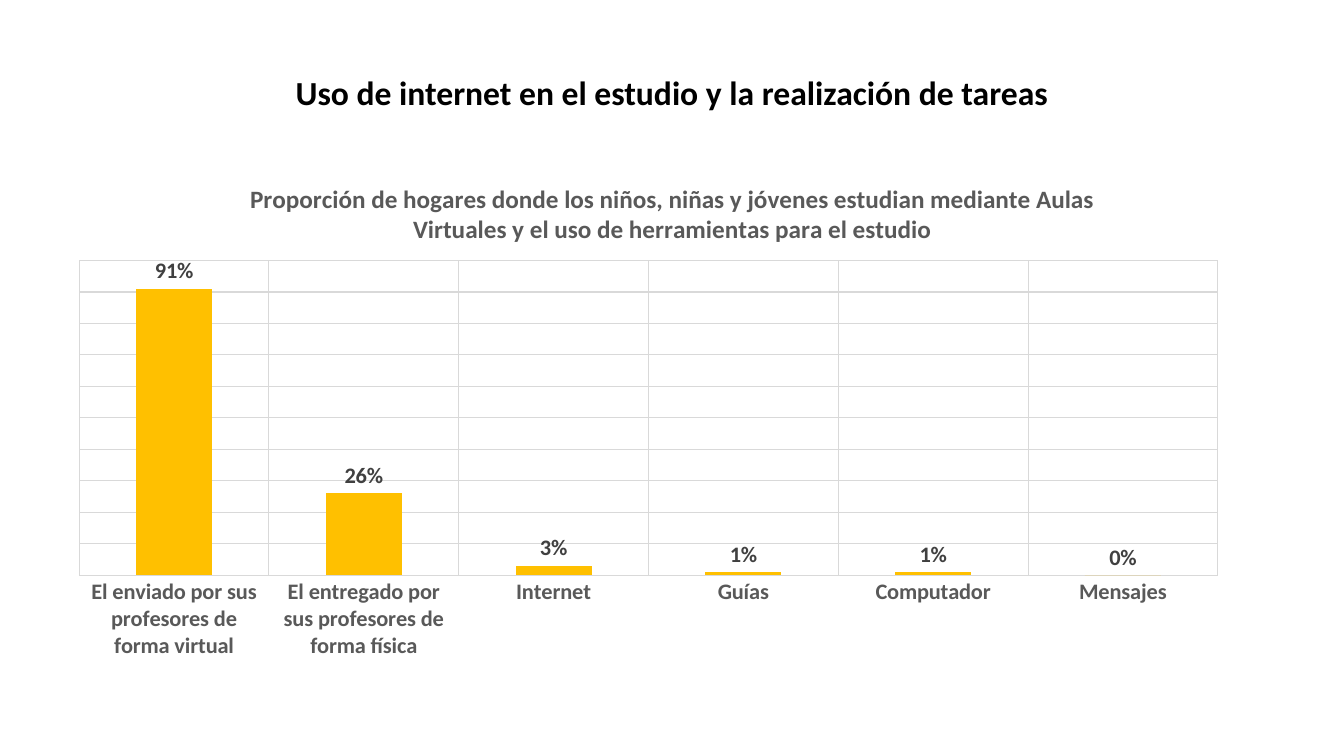
from dataclasses import dataclass

import lxml.etree
import pptx
import pptx.chart.data
import pptx.dml.color
import pptx.enum.chart
import pptx.enum.text
import pptx.oxml.ns
import pptx.util
from pptx.util import Inches


@dataclass(frozen=True)
class Theme:
    """Colours, font and type sizes of the slide."""
    font: str = "Calibri"
    heading: str = "000000"
    caption: str = "595959"
    value: str = "404040"
    bar: str = "FFC000"
    grid: str = "D9D9D9"
    heading_size: int = 24
    caption_size: int = 18
    label_size: int = 16
    base_size: int = 10


THEME = Theme()
HEADING = "Uso de internet en el estudio y la realización de tareas"
QUESTION = ("Proporción de hogares donde los niños, niñas y jóvenes estudian mediante "
            "Aulas Virtuales y el uso de herramientas para el estudio")
TOOLS = {
    "El enviado por sus profesores de forma virtual": 0.91,
    "El entregado por sus profesores de forma física": 0.26,
    "Internet": 0.03,
    "Guías": 0.01,
    "Computador": 0.01,
    "Mensajes": 0,
}


def rgb(colour):
    """Turn a hex string into a colour."""
    return pptx.dml.color.RGBColor.from_string(colour)


def style_font(font, size, colour, bold=True):
    """Apply the theme font with a size, colour and weight."""
    font.name = THEME.font
    font.size = pptx.util.Pt(size)
    font.bold = bold
    font.color.rgb = rgb(colour)


def write_text(frame, text, *, size, colour, bold=True):
    """Write one centred paragraph into a text frame."""
    paragraph = frame.paragraphs[0]
    paragraph.alignment = pptx.enum.text.PP_ALIGN.CENTER
    run = paragraph.add_run()
    run.text = text
    style_font(run.font, size, colour, bold)


def style_line(line):
    """Draw a thin grid line."""
    line.color.rgb = rgb(THEME.grid)
    line.width = pptx.util.Pt(0.75)


def place_plot(chart, **fractions):
    """Fix the inner plot area as fractions of the chart."""
    plot_area = chart.element.xpath("c:chart/c:plotArea")[0]
    for automatic in plot_area.xpath("c:layout"):
        plot_area.remove(automatic)
    qn = pptx.oxml.ns.qn
    layout = lxml.etree.Element(qn("c:layout"))
    manual = lxml.etree.SubElement(layout, qn("c:manualLayout"))
    settings = {"layoutTarget": "inner", "xMode": "edge", "yMode": "edge", **fractions}
    for name, value in settings.items():
        lxml.etree.SubElement(manual, qn(f"c:{name}")).set("val", str(value))
    plot_area.insert(0, layout)


def add_heading(slide):
    """Add the slide heading."""
    heading = slide.shapes.add_textbox(Inches(2.18), Inches(0.66), Inches(8.97), Inches(0.5))
    heading.text_frame.word_wrap = True
    write_text(heading.text_frame, HEADING, size=THEME.heading_size, colour=THEME.heading)


def style_axes(chart):
    """Show the category axis and keep only the grid of the value axis."""
    tools, share = chart.category_axis, chart.value_axis
    tools.major_tick_mark = pptx.enum.chart.XL_TICK_MARK.NONE
    style_font(tools.tick_labels.font, THEME.label_size, THEME.caption)
    style_line(tools.format.line)
    share.minimum_scale, share.maximum_scale, share.major_unit = 0, 1, 0.1
    share.visible = False
    for axis in (tools, share):
        axis.has_major_gridlines = True
        style_line(axis.major_gridlines.format.line)


def style_bars(plot):
    """Colour the bars and label them with percentages."""
    plot.gap_width, plot.overlap = 150, -27
    plot.vary_by_categories = False
    households = plot.series[0]
    households.format.fill.solid()
    households.format.fill.fore_color.rgb = rgb(THEME.bar)
    labels = households.data_labels
    labels.show_value = True
    labels.number_format, labels.number_format_is_linked = "0%", False
    labels.position = pptx.enum.chart.XL_LABEL_POSITION.OUTSIDE_END
    style_font(labels.font, THEME.label_size, THEME.value)


def add_tools_chart(slide):
    """Add the column chart of study tools."""
    data = pptx.chart.data.CategoryChartData(number_format="0%")
    data.categories = list(TOOLS)
    data.add_series("Hogares", list(TOOLS.values()))
    chart = slide.shapes.add_chart(
        pptx.enum.chart.XL_CHART_TYPE.COLUMN_CLUSTERED,
        Inches(0.78), Inches(1.61), Inches(11.77), Inches(4.94), data).chart
    style_font(chart.font, THEME.base_size, THEME.heading, bold=False)
    chart.has_legend = False
    chart.has_title = True
    chart.chart_title.include_in_layout = False
    write_text(chart.chart_title.text_frame, QUESTION,
               size=THEME.caption_size, colour=THEME.caption)
    style_axes(chart)
    style_bars(chart.plots[0])
    place_plot(chart, x=0, y=0.2, w=0.96, h=0.64)


def main():
    """Build and save the slide."""
    deck = pptx.Presentation()
    deck.slide_width, deck.slide_height = Inches(13.33), Inches(7.5)
    slide = deck.slides.add_slide(deck.slide_layouts[6])
    add_heading(slide)
    add_tools_chart(slide)
    deck.save("out.pptx")


if __name__ == "__main__":
    main()
